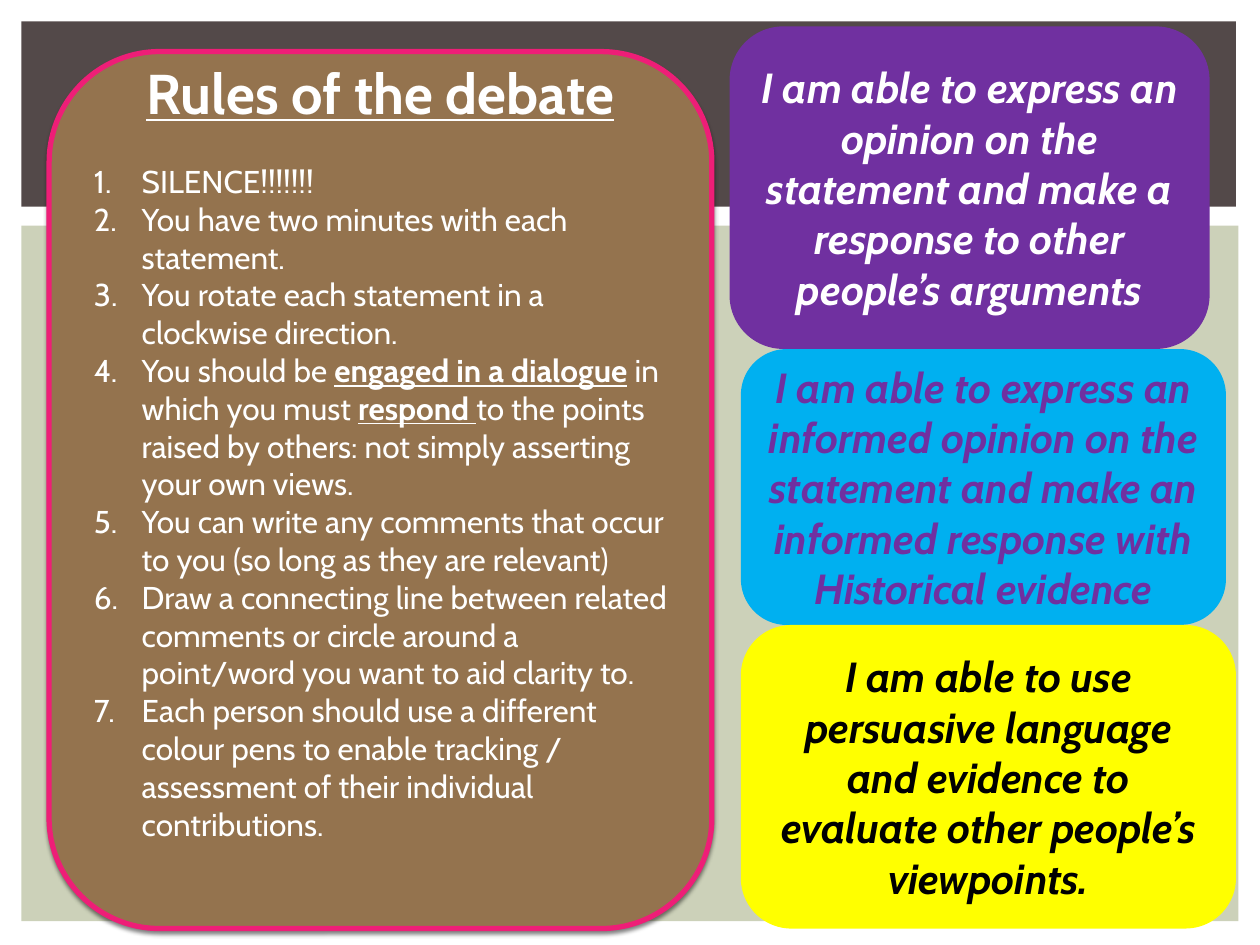
"""Build the debate rules slide with its three success criteria."""
from lxml.etree import SubElement
from pptx import Presentation
from pptx.dml.color import RGBColor
from pptx.enum.shapes import MSO_SHAPE as Shape
from pptx.enum.text import MSO_ANCHOR as Anchor, MSO_AUTO_SIZE as AutoSize, PP_ALIGN as Align
from pptx.oxml.ns import qn
from pptx.util import Inches, Pt

TITLE = "Rules of the debate"
RULES = [
    [("SILENCE!!!!!!!", False)],
    [("You have two minutes with each statement.", False)],
    [("You rotate each statement in a clockwise direction.", False)],
    [
        ("You should be ", False),
        ("engaged in a dialogue", True),
        (" in which you must ", False),
        ("respond ", True),
        ("to the points raised by others: not simply asserting your own views.", False),
    ],
    [("You can write any comments that occur to you (so long as they are relevant)", False)],
    [("Draw a connecting line between related comments or circle around a "
      "point/word you want to aid clarity to.", False)],
    [("Each person should use a different colour pens to enable tracking / "
      "assessment of their individual contributions.", False)],
]
CRITERIA = [
    ("I am able to express an opinion on the statement and make a response to "
     "other people’s arguments", 5.79, 3.81, 2.56, "purple", "white"),
    ("I am able to express an informed opinion on the statement and make an "
     "informed response with Historical evidence", 5.88, 3.85, 2.19, "blue", "purple"),
    ("I am able to use persuasive language and evidence to evaluate other "
     "people’s viewpoints.", 5.88, 3.93, 2.41, "yellow", "black"),
]
CRITERIA_TOP = 0.21
BANDS = [((0.17, 1.79, 9.66, 5.52), "sage"), ((0.17, 0.17, 9.64, 1.47), "slate")]
RULES_CARD = (0.39, 0.41, 5.26, 6.96)
TITLE_BOX = (0.39, 0.46, 5.26, 0.54)
THEME = {
    "font": "Cabin",
    "sizes": {"title": 32, "criterion": 24, "rule": 18},
    "colours": {
        "sage": "CCD1B9", "slate": "534949", "brown": "94734E", "pink": "EE1E77",
        "purple": "7030A0", "blue": "00B0F0", "yellow": "FFFF00",
        "white": "FFFFFF", "black": "000000",
    },
}


def colour(name):
    """Return a theme colour."""
    return RGBColor.from_string(THEME["colours"][name])


def add_block(slide, kind, place, fill):
    """Add a plain filled shape without outline or shadow."""
    block = slide.shapes.add_shape(kind, *map(Inches, place))
    block.shadow.inherit = False
    block.fill.solid()
    block.fill.fore_color.rgb = colour(fill)
    block.line.fill.background()
    return block


def add_span(para, text, role, ink, bold=False, italic=False, underline=False):
    """Add one formatted run to a paragraph."""
    span = para.add_run()
    span.text = text
    font = span.font
    font.name = THEME["font"]
    font.size = Pt(THEME["sizes"][role])
    font.color.rgb = colour(ink)
    font.bold, font.italic, font.underline = bold, italic, underline


def add_soft_shadow(block):
    """Cast a short shadow below a shape."""
    effects = block._element.spPr.find(qn("a:effectLst"))
    shadow = SubElement(effects, qn("a:outerShdw"), blurRad=str(Pt(2.5)),
                        dist=str(Pt(2)), dir="5400000", rotWithShape="0")
    tint = SubElement(shadow, qn("a:srgbClr"), val=THEME["colours"]["black"])
    SubElement(tint, qn("a:alpha"), val="50000")


def number_paragraph(para):
    """Give a paragraph an automatic number and a hanging indent."""
    properties = para._p.get_or_add_pPr()
    indent = Inches(0.38)
    properties.set("marL", str(indent))
    properties.set("indent", str(-indent))
    SubElement(properties, qn("a:buFont"), typeface="+mj-lt")
    SubElement(properties, qn("a:buAutoNum"), type="arabicPeriod")


def add_rules(slide):
    """Add the card with the numbered rules."""
    card = add_block(slide, Shape.ROUNDED_RECTANGLE, RULES_CARD, "brown")
    card.line.color.rgb = colour("pink")
    card.line.width = Pt(3)
    add_soft_shadow(card)
    frame = card.text_frame
    frame.word_wrap = True
    frame.vertical_anchor = Anchor.TOP
    frame.margin_top = Inches(0.62)
    for index, rule in enumerate(RULES):
        para = frame.add_paragraph() if index else frame.paragraphs[0]
        para.alignment = Align.LEFT
        number_paragraph(para)
        for text, stressed in rule:
            add_span(para, text, "rule", "white", bold=stressed, underline=stressed)


def place_title(slide):
    """Set the title at the head of the rules card."""
    title = slide.shapes.title
    title.left, title.top, title.width, title.height = map(Inches, TITLE_BOX)
    frame = title.text_frame
    frame.auto_size = AutoSize.NONE
    frame.word_wrap = True
    frame.vertical_anchor = Anchor.MIDDLE
    frame.margin_top = frame.margin_bottom = 0
    para = frame.paragraphs[0]
    para.alignment = Align.CENTER
    add_span(para, TITLE, "title", "white", bold=True, underline=True)
    slide.shapes._spTree.append(title._element)


def add_criteria(slide):
    """Stack the success criteria down the right side."""
    top = CRITERIA_TOP
    for text, left, width, height, fill, ink in CRITERIA:
        box = add_block(slide, Shape.ROUNDED_RECTANGLE, (left, top, width, height), fill)
        frame = box.text_frame
        frame.word_wrap = True
        frame.vertical_anchor = Anchor.MIDDLE
        para = frame.paragraphs[0]
        para.alignment = Align.CENTER
        add_span(para, text, "criterion", ink, bold=True, italic=True)
        top += height


def main():
    """Create and save the deck."""
    deck = Presentation()
    deck.slide_width, deck.slide_height = Inches(10), Inches(7.5)
    slide = deck.slides.add_slide(deck.slide_layouts.get_by_name("Title Only"))
    for place, fill in BANDS:
        add_block(slide, Shape.RECTANGLE, place, fill)
    add_rules(slide)
    place_title(slide)
    add_criteria(slide)
    deck.save("out.pptx")


if __name__ == "__main__":
    main()
